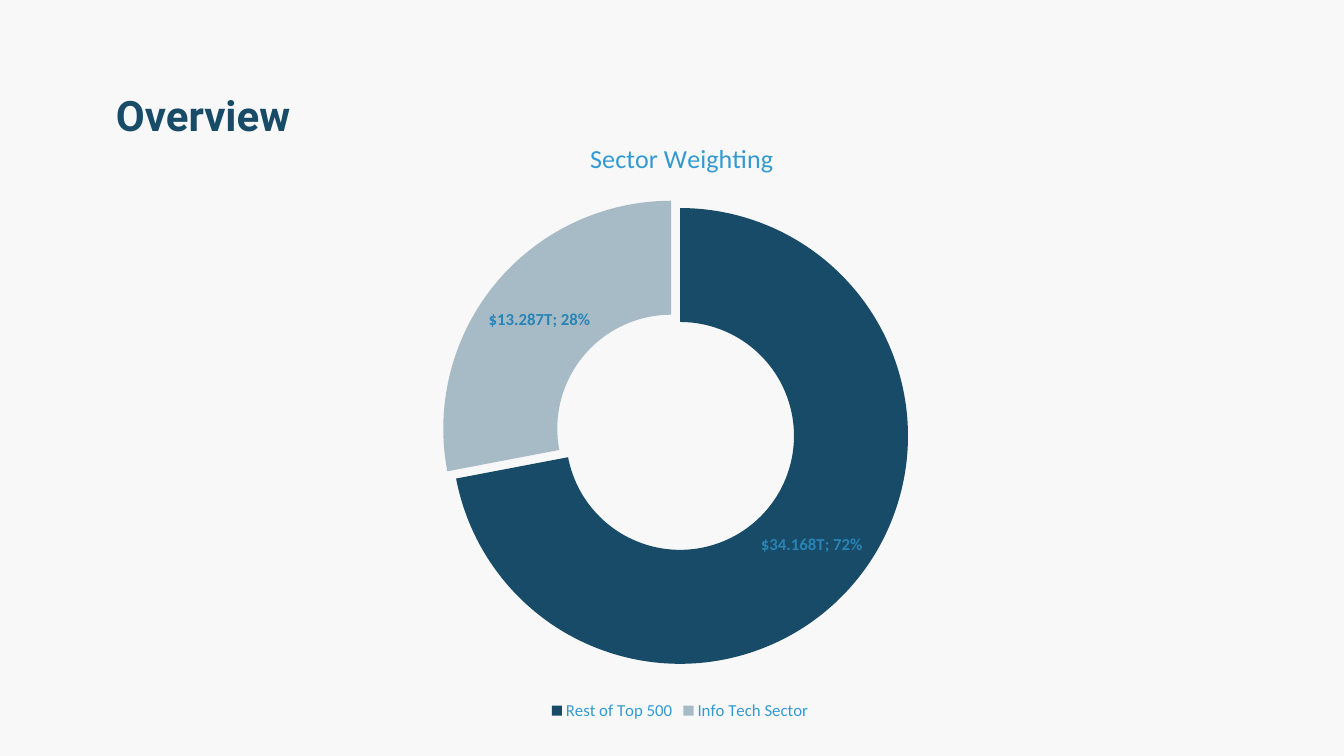
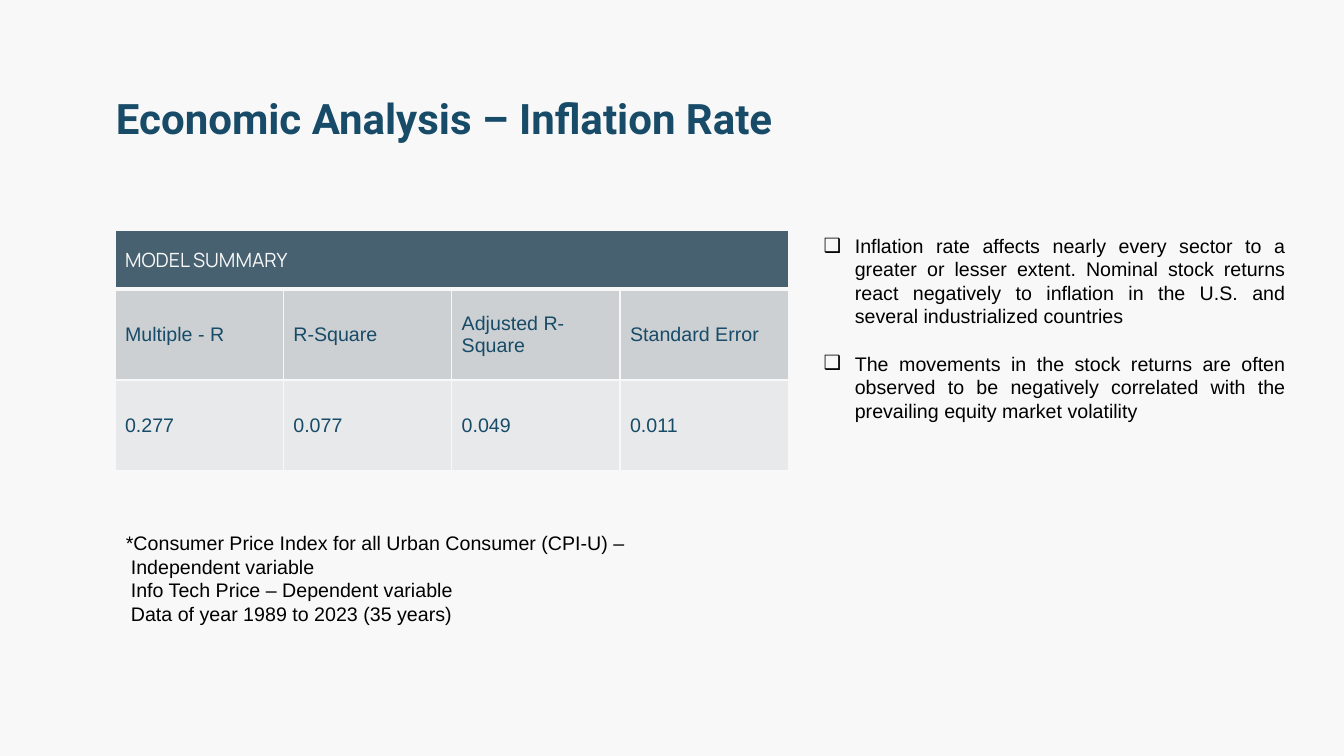
from dataclasses import dataclass

from lxml.etree import SubElement
from pptx import Presentation
from pptx.chart.data import CategoryChartData
from pptx.dml.color import RGBColor
from pptx.enum.chart import XL_CHART_TYPE as ChartType, XL_LEGEND_POSITION as LegendPosition
from pptx.enum.text import MSO_ANCHOR as Anchor, PP_ALIGN as Align
from pptx.oxml import parse_xml
from pptx.oxml.ns import nsdecls, qn
from pptx.util import Inches, Pt

NAVY, PALE_BLUE, BACKGROUND, BLACK = "174B67", "A7BBC7", "F8F8F8", "000000"
SKY, LABEL_BLUE = "339AD1", "2984B5"
HEADER_FILL, LABEL_FILL, VALUE_FILL = "476170", "CCD0D3", "E8E9EB"


@dataclass(frozen=True)
class Box:
    """Position and size in inches."""
    left: float
    top: float
    width: float
    height: float

    def lengths(self):
        """Return the four values as lengths."""
        return [Inches(v) for v in (self.left, self.top, self.width, self.height)]


@dataclass(frozen=True)
class Style:
    """Font settings of a text."""
    name: str
    size: float
    color: str
    bold: bool = False


@dataclass(frozen=True)
class Line:
    """One paragraph with its indents in inches."""
    text: str
    margin: float
    indent: float = 0
    bullet: str = ""
    align: Align = Align.LEFT
    space_before: float = 0


@dataclass(frozen=True)
class TableRow:
    """One table row with its look."""
    texts: tuple
    height: float
    fill: str
    style: Style


TITLE_BOX = Box(1.05, 0.79, 11.23, 0.76)
TITLE = Style("Roboto", 30, NAVY, True)
BODY = Style("Arial", 14, BLACK)
TABLE_TEXT = Style("Arial", 14, NAVY)
COLUMN_WIDTH = 1.67

TABLE_ROWS = (
    TableRow(("MODEL SUMMARY", "", "", ""), 0.58, HEADER_FILL, Style("Manrope", 14, BACKGROUND)),
    TableRow(("Multiple - R", "R-Square", "Adjusted R-Square", "Standard Error"),
             0.9, LABEL_FILL, TABLE_TEXT),
    TableRow(("0.277", "0.077", "0.049", "0.011"), 0.9, VALUE_FILL, TABLE_TEXT),
)
NOTES = (
    Line("*Consumer Price Index for all Urban Consumer (CPI-U) –", 0.05, -0.05),
    Line("Independent variable", 0.05),
    Line("Info Tech Price – Dependent variable", 0.05),
    Line("Data of year 1989 to 2023 (35 years)", 0.05),
)
FINDINGS = (
    Line("Inflation rate affects nearly every sector to a greater or lesser extent. "
         "Nominal stock returns react negatively to inflation in the U.S. and several "
         "industrialized countries", 0.31, -0.31, "❑", Align.JUSTIFY),
    Line("The movements in the stock returns are often observed to be negatively "
         "correlated with the prevailing equity market volatility",
         0.31, -0.31, "❑", Align.JUSTIFY, 16.8),
)


def rgb(color: str) -> RGBColor:
    """Turn a hex string into a colour."""
    return RGBColor.from_string(color)


def set_font(font, style: Style) -> None:
    """Apply a style to a font."""
    font.name, font.size, font.bold = style.name, Pt(style.size), style.bold
    font.color.rgb = rgb(style.color)


def add_titled_slide(presentation, text: str, anchor: Anchor):
    """Add a title-only slide and format its title."""
    slide = presentation.slides.add_slide(presentation.slide_layouts[5])
    title = slide.shapes.title
    title.left, title.top, title.width, title.height = TITLE_BOX.lengths()
    frame = title.text_frame
    frame.text = text
    frame.vertical_anchor = anchor
    frame.margin_left = frame.margin_right = frame.margin_top = frame.margin_bottom = Inches(0.1)
    paragraph = frame.paragraphs[0]
    paragraph.alignment = Align.LEFT
    set_font(paragraph.font, TITLE)
    return slide


def add_lines(slide, box: Box, lines: tuple) -> None:
    """Add a text box with indented or bulleted paragraphs."""
    frame = slide.shapes.add_textbox(*box.lengths()).text_frame
    frame.word_wrap = True
    for number, line in enumerate(lines):
        paragraph = frame.add_paragraph() if number else frame.paragraphs[0]
        paragraph.text = line.text
        paragraph.alignment = line.align
        properties = paragraph._p.get_or_add_pPr()
        properties.set("marL", str(Inches(line.margin)))
        properties.set("indent", str(Inches(line.indent)))
        if line.bullet:
            SubElement(properties, qn("a:buFont")).set("typeface", BODY.name)
            SubElement(properties, qn("a:buChar")).set("char", line.bullet)
        paragraph.space_before = Pt(line.space_before)
        set_font(paragraph.font, BODY)


def set_border(cell, side: str, width: float) -> None:
    """Draw one border of a cell."""
    cell._tc.get_or_add_tcPr().append(parse_xml(
        f'<a:ln{side} {nsdecls("a")} w="{Pt(width)}"><a:solidFill>'
        f'<a:srgbClr val="{BACKGROUND}"/></a:solidFill></a:ln{side}>'))


def add_summary_table(slide, left: float, top: float, rows: tuple) -> None:
    """Add the table with a header row across all columns."""
    columns = len(rows[0].texts)
    box = Box(left, top, columns * COLUMN_WIDTH, sum(row.height for row in rows))
    table = slide.shapes.add_table(len(rows), columns, *box.lengths()).table
    table.first_row = table.horz_banding = False
    for column in table.columns:
        column.width = Inches(COLUMN_WIDTH)
    for row_index, row in enumerate(rows):
        table.rows[row_index].height = Inches(row.height)
        for column_index, text in enumerate(row.texts):
            cell = table.cell(row_index, column_index)
            widths = {"L": 1, "R": 1, "T": 3 if row_index == 1 else 1,
                      "B": 3 if row_index == 0 else 1}
            for side, width in widths.items():
                set_border(cell, side, width)
            cell.fill.solid()
            cell.fill.fore_color.rgb = rgb(row.fill)
            cell.vertical_anchor = Anchor.MIDDLE
            cell.text = text
            set_font(cell.text_frame.paragraphs[0].font, row.style)
    table.cell(0, 0).merge(table.cell(0, columns - 1))


def set_layout(parent, index: int, **values) -> None:
    """Give a chart part a manual layout as fractions of the chart."""
    for layout in parent.findall(qn("c:layout")):
        parent.remove(layout)
    layout = parse_xml(f'<c:layout {nsdecls("c")}><c:manualLayout/></c:layout>')
    for name, value in values.items():
        SubElement(layout[0], qn(f"c:{name}")).set("val", str(value))
    parent.insert(index, layout)


def add_sector_chart(slide, box: Box) -> None:
    """Add the doughnut chart of sector weights."""
    data = CategoryChartData(number_format='"$"00.000\\T')
    data.categories = ["Rest of Top 500", "Info Tech Sector"]
    data.add_series("Series 1", (34.168, 13.287))
    chart = slide.shapes.add_chart(ChartType.DOUGHNUT, *box.lengths(), data).chart
    set_font(chart.font, Style("Calibri", 10, NAVY))

    chart.has_title = True
    title = chart.chart_title
    title.text_frame.text = "Sector Weighting"
    set_font(title.text_frame.paragraphs[0].font, Style("Calibri", 18.6, SKY))
    set_layout(title._element, 1, xMode="edge", yMode="edge", x=0.37, y=0.03)

    chart.has_legend = True
    chart.legend.position = LegendPosition.BOTTOM
    chart.legend.include_in_layout = False
    set_font(chart.legend.font, Style("Calibri", 12, SKY))

    plot = chart.plots[0]
    series = plot.series[0]
    for index, color in enumerate((NAVY, PALE_BLUE)):
        point_format = series.points[index].format
        point_format.fill.solid()
        point_format.fill.fore_color.rgb = rgb(color)
        point_format.line.fill.background()
    tech_point = series._element.findall(qn("c:dPt"))[1]
    tech_point.find(qn("c:spPr")).addprevious(
        parse_xml(f'<c:explosion {nsdecls("c")} val="10"/>'))

    plot.has_data_labels = True
    labels = plot.data_labels
    labels.show_value = labels.show_percentage = True
    set_font(labels.font, Style("Calibri", 12, LABEL_BLUE, True))

    doughnut = plot._element
    doughnut.find(qn("c:holeSize")).set("val", "39")
    set_layout(doughnut.getparent(), 0, layoutTarget="inner", xMode="edge", yMode="edge",
               x=0.17, y=0.15, w=0.66, h=0.75)


def main() -> None:
    """Build and save the presentation."""
    presentation = Presentation()
    presentation.slide_width, presentation.slide_height = Inches(13.33), Inches(7.5)
    background = presentation.slide_master.background.fill
    background.solid()
    background.fore_color.rgb = rgb(BACKGROUND)

    overview = add_titled_slide(presentation, "Overview", Anchor.TOP)
    add_sector_chart(overview, Box(3.14, 1.16, 7.21, 6.03))

    inflation = add_titled_slide(presentation, "Economic Analysis – Inflation Rate", Anchor.MIDDLE)
    add_summary_table(inflation, 1.14, 2.29, TABLE_ROWS)
    add_lines(inflation, Box(1.15, 5.22, 6.06, 1.05), NOTES)
    add_lines(inflation, Box(8.07, 2.27, 4.78, 3.4), FINDINGS)
    presentation.save("out.pptx")


if __name__ == "__main__":
    main()
